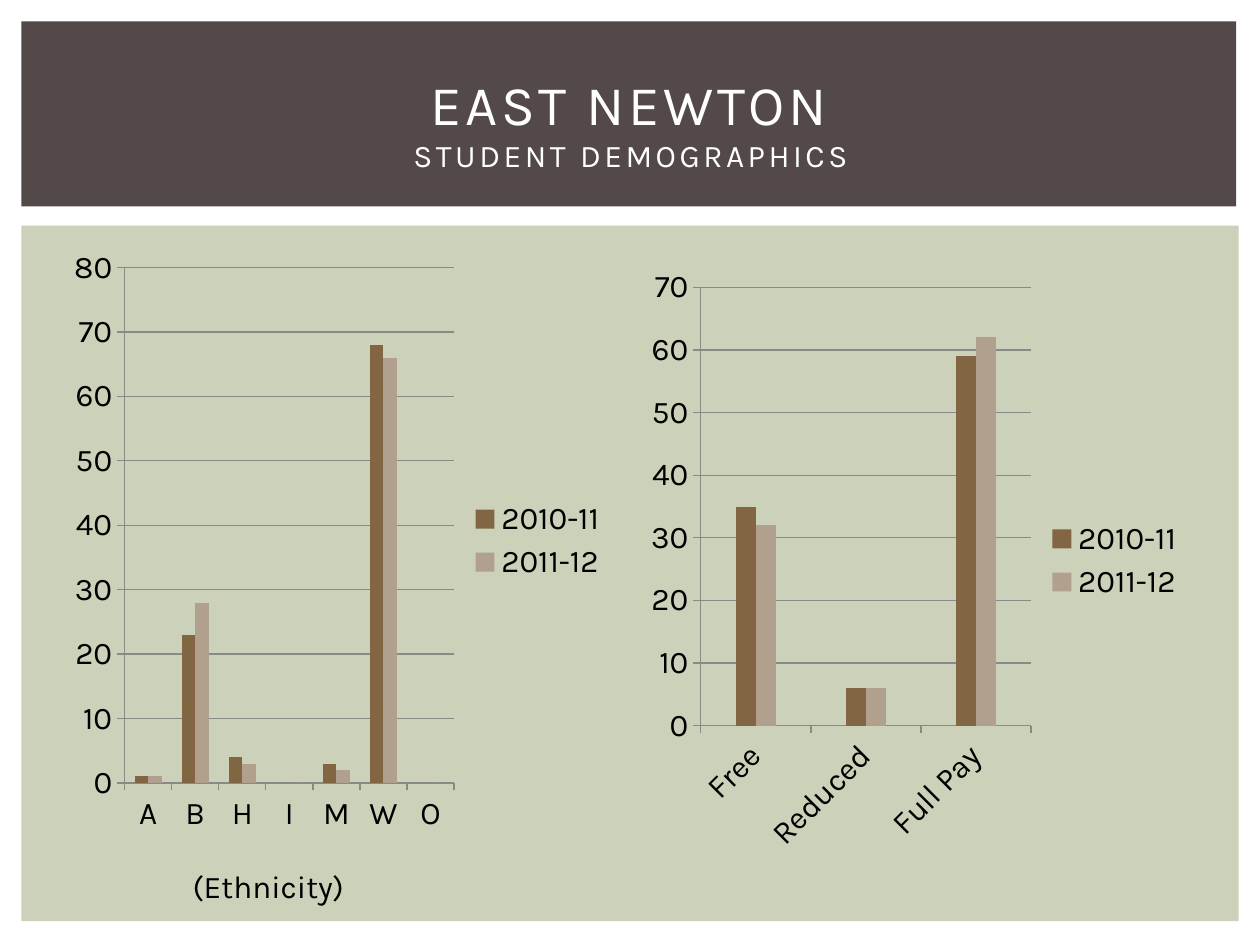
from pptx import Presentation
from pptx.chart.data import CategoryChartData
from pptx.dml.color import RGBColor
from pptx.enum.chart import XL_CHART_TYPE, XL_LEGEND_POSITION, XL_TICK_MARK
from pptx.enum.shapes import MSO_SHAPE
from pptx.enum.text import MSO_ANCHOR, PP_ALIGN
from pptx.util import Cm, Pt

FONT = "Karla"
SERIES_COLORS = ("826644", "B2A08F")
GRID_COLOR = "898989"
CHART_WIDTH, CHART_HEIGHT = 11.23, 12.24


def color(hex_string):
    return RGBColor.from_string(hex_string)


def style_font(font, size, hex_string):
    font.name = FONT
    font.size = Pt(size)
    font.color.rgb = color(hex_string)


def add_panel(slide, left, top, width, height, fill):
    panel = slide.shapes.add_shape(
        MSO_SHAPE.RECTANGLE, Cm(left), Cm(top), Cm(width), Cm(height))
    panel.shadow.inherit = False
    panel.fill.solid()
    panel.fill.fore_color.rgb = color(fill)
    panel.line.fill.background()


def add_text(slide, left, top, width, height, text, sizes, hex_string, spacing=0):
    """Add one centred paragraph, with a font size for each of its lines."""
    box = slide.shapes.add_textbox(Cm(left), Cm(top), Cm(width), Cm(height))
    frame = box.text_frame
    frame.word_wrap = True
    frame.vertical_anchor = MSO_ANCHOR.MIDDLE
    para = frame.paragraphs[0]
    para.text = text
    para.alignment = PP_ALIGN.CENTER
    for span, size in zip(para.runs, sizes):
        style_font(span.font, size, hex_string)
        if spacing:
            span.font._element.set("spc", str(spacing * 100))


def style_axis(axis):
    axis.major_tick_mark = XL_TICK_MARK.OUTSIDE
    axis.minor_tick_mark = XL_TICK_MARK.NONE
    axis.format.line.color.rgb = color(GRID_COLOR)
    axis.format.line.width = Pt(0.75)


def add_column_chart(slide, left, top, categories, series, maximum, gap, rotation=0):
    data = CategoryChartData()
    data.categories = categories
    for name, values in series.items():
        data.add_series(name, values)
    chart = slide.shapes.add_chart(
        XL_CHART_TYPE.COLUMN_CLUSTERED, Cm(left), Cm(top),
        Cm(CHART_WIDTH), Cm(CHART_HEIGHT), data).chart
    style_font(chart.font, 18, "000000")
    chart.has_title = False
    chart.has_legend = True
    chart.legend.position = XL_LEGEND_POSITION.RIGHT
    chart.legend.include_in_layout = False

    plot = chart.plots[0]
    plot.gap_width = gap
    plot.overlap = 0
    plot.vary_by_categories = False
    for column, fill in zip(plot.series, SERIES_COLORS):
        column.format.fill.solid()
        column.format.fill.fore_color.rgb = color(fill)

    style_axis(chart.category_axis)
    style_axis(chart.value_axis)
    chart.value_axis.minimum_scale = 0
    chart.value_axis.maximum_scale = maximum
    chart.value_axis.major_unit = 10
    grid = chart.value_axis.major_gridlines.format.line
    grid.color.rgb = color(GRID_COLOR)
    grid.width = Pt(0.75)
    if rotation:
        style_font(chart.category_axis.tick_labels.font, 18, "000000")
        body = chart.category_axis._element.txPr.bodyPr
        body.set("rot", str(rotation * 60000))


def main():
    deck = Presentation()
    deck.slide_width, deck.slide_height = Cm(25.4), Cm(19.05)
    slide = deck.slides.add_slide(deck.slide_layouts[6])

    add_panel(slide, 0.43, 4.55, 24.54, 14.02, "CCD1B9")
    add_panel(slide, 0.43, 0.43, 24.49, 3.73, "534949")
    add_text(slide, 1.07, 0.99, 23.29, 2.92,
             "EAST NEWTON\vSTUDENT DEMOGRAPHICS", (32, 18), "FFFFFF", spacing=2)

    add_column_chart(
        slide, 1.27, 4.78, ("A", "B", "H", "I", "M", "W", "O"),
        {"2010-11": (1, 23, 4, 0, 3, 68, 0), "2011-12": (1, 28, 3, 0, 2, 66, 0)},
        maximum=80, gap=150)
    add_text(slide, 1.7, 17.35, 7.42, 1.02, "(Ethnicity)", (18,), "000000")
    add_column_chart(
        slide, 12.9, 5.18, ("Free", "Reduced", "Full Pay"),
        {"2010-11": (35, 6, 59), "2011-12": (32, 6, 62)},
        maximum=70, gap=345, rotation=-45)

    deck.save("out.pptx")


if __name__ == "__main__":
    main()
